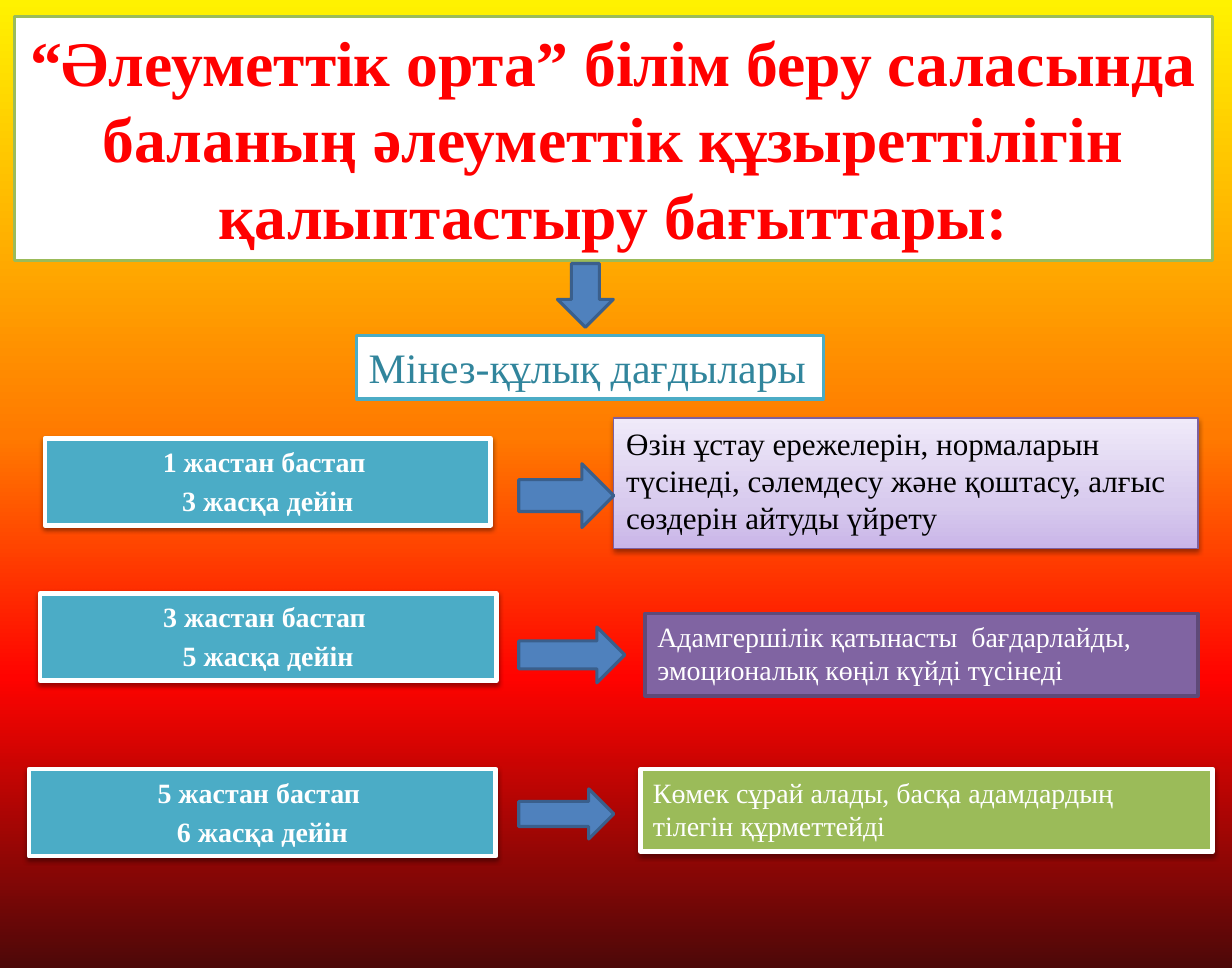
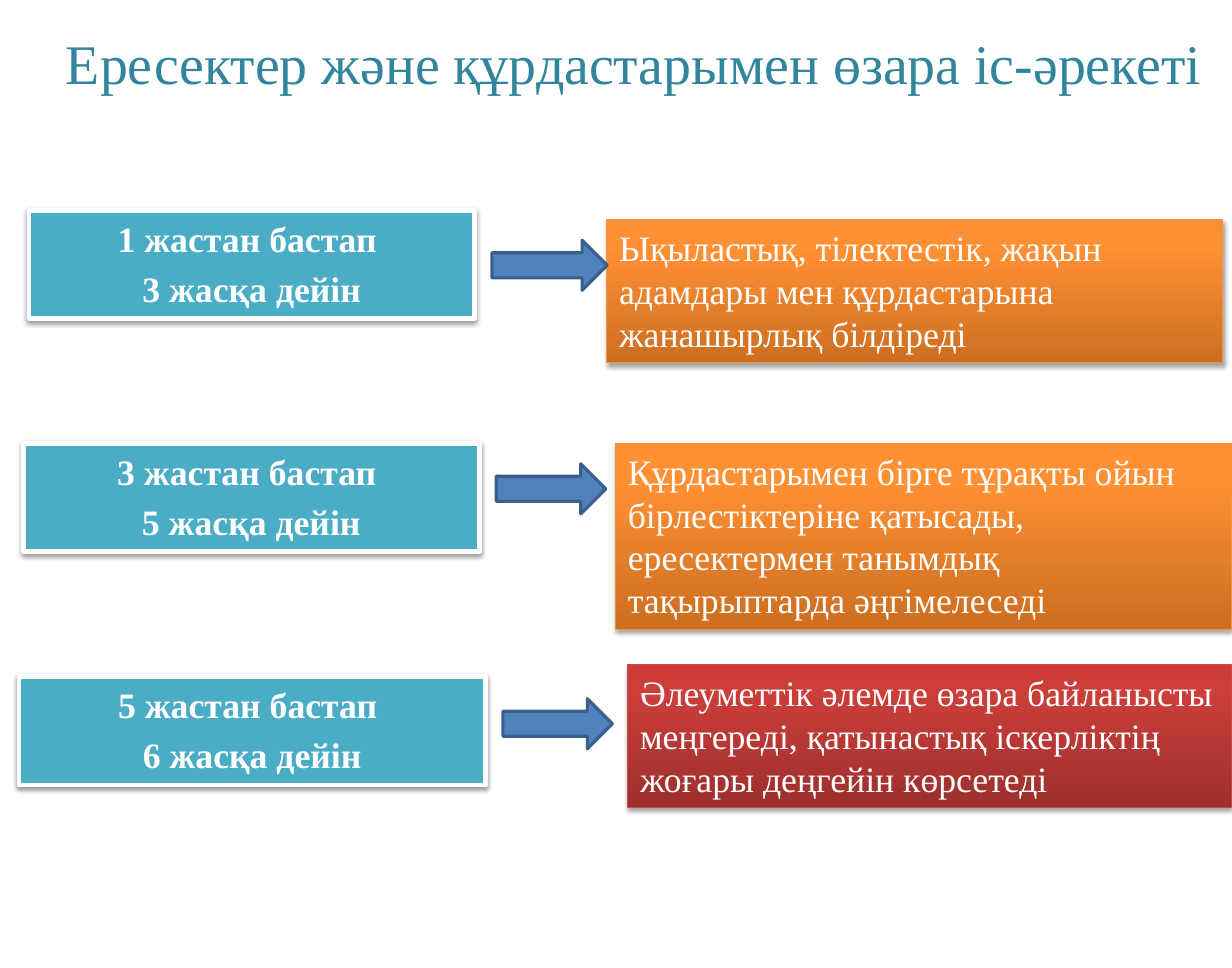
from typing import NamedTuple, Optional, Union

from lxml.etree import SubElement
from pptx import Presentation
from pptx.dml.color import RGBColor
from pptx.enum.shapes import MSO_SHAPE
from pptx.enum.text import MSO_ANCHOR, MSO_AUTO_SIZE, PP_ALIGN
from pptx.oxml.ns import qn
from pptx.util import Cm, Pt

# Shared style
FONT = "Times New Roman"
WHITE = RGBColor(0xFF, 0xFF, 0xFF)
BLACK = RGBColor(0x00, 0x00, 0x00)
RED = RGBColor(0xFF, 0x00, 0x00)
TEAL = RGBColor(0x4B, 0xAC, 0xC6)
DARK_TEAL = RGBColor(0x31, 0x85, 0x9C)
GREEN = RGBColor(0x9B, 0xBB, 0x59)
BLUE = RGBColor(0x4F, 0x81, 0xBD)
DARK_BLUE = RGBColor(0x3A, 0x5F, 0x8C)
PURPLE = RGBColor(0x80, 0x64, 0xA2)
DARK_PURPLE = RGBColor(0x5F, 0x4A, 0x78)
LILAC_EDGE = RGBColor(0x7D, 0x60, 0xA0)
ORANGE_EDGE = RGBColor(0xF6, 0x92, 0x40)
CRIMSON_EDGE = RGBColor(0xBF, 0x4C, 0x48)


class Gradient(NamedTuple):
    stops: tuple  # (percent, colour) pairs
    angle: int = 270  # clockwise


class Look(NamedTuple):
    fill: Union[RGBColor, Gradient]
    line: RGBColor
    width: float = 2
    shadow: int = 0  # opacity in percent
    drop: float = 1.6


class Box(NamedTuple):
    left: float
    top: float
    width: float
    height: float

    def place(self):
        return [Cm(length) for length in self]


class Note(NamedTuple):
    text: str
    look: Look
    drop: float  # distance below the top of the row
    width: float
    height: float
    size: int
    colour: RGBColor = WHITE


class Stage(NamedTuple):
    row: Box
    arrow: Box  # relative to the row
    note: Note


SUNSET = Gradient(((0, RGBColor(0xFF, 0xF2, 0x00)), (45, RGBColor(0xFF, 0x7A, 0x00)),
                   (70, RGBColor(0xFF, 0x03, 0x00)), (100, RGBColor(0x4D, 0x08, 0x08))), 90)
LILAC_FADE = Gradient(((0, RGBColor(0xC9, 0xB5, 0xE8)), (35, RGBColor(0xD8, 0xCB, 0xEE)),
                       (100, RGBColor(0xF0, 0xEA, 0xF9))))
ORANGE_FADE = Gradient(((0, RGBColor(0xCC, 0x6E, 0x20)), (80, RGBColor(0xFF, 0x90, 0x34)),
                        (100, RGBColor(0xFF, 0x91, 0x36))))
CRIMSON_FADE = Gradient(((0, RGBColor(0x9C, 0x2F, 0x2D)), (80, RGBColor(0xCB, 0x3E, 0x3A)),
                         (100, RGBColor(0xCE, 0x3B, 0x37))))

TITLE_LOOK = Look(WHITE, GREEN)
SUBTITLE_LOOK = Look(WHITE, TEAL)
ARROW_LOOK = Look(BLUE, DARK_BLUE)
AGE_LOOK = Look(TEAL, WHITE, 3, 38)
LILAC_LOOK = Look(LILAC_FADE, LILAC_EDGE, 0.75, 38)
PURPLE_LOOK = Look(PURPLE, DARK_PURPLE)
GREEN_LOOK = Look(GREEN, WHITE, 3, 38)
ORANGE_LOOK = Look(ORANGE_FADE, ORANGE_EDGE, 0.75, 35, 1.8)
CRIMSON_LOOK = Look(CRIMSON_FADE, CRIMSON_EDGE, 0.75, 35, 1.8)

# Age groups, with the width of each label
AGES = ((1, 3, 10.13), (3, 5, 10.37), (5, 6, 10.61))

BEHAVIOUR_STAGES = (
    Stage(Box(1.02, 9.96, 26.21, 1.98), Box(10.77, 0.58, 2.16, 1.45),
          Note("Өзін ұстау ережелерін, нормаларын түсінеді, сәлемдесу және қоштасу, "
               "алғыс сөздерін айтуды үйрету", LILAC_LOOK, -0.46, 13.28, 2.97, 20, BLACK)),
    Stage(Box(0.91, 13.49, 26.32, 1.98), Box(10.88, 0.76, 2.41, 1.27),
          Note("Адамгершілік қатынасты  бағдарлайды, эмоционалық көңіл күйді түсінеді",
               PURPLE_LOOK, 0.45, 12.57, 1.88, 18)),
    Stage(Box(0.66, 17.48, 26.9, 1.98), Box(11.13, 0.45, 2.16, 1.14),
          Note("Көмек сұрай алады, басқа адамдардың тілегін құрметтейді",
               GREEN_LOOK, 0, 13, 1.88, 18)),
)
INTERACTION_STAGES = (
    Stage(Box(0.66, 4.78, 27.13, 2.46), Box(10.52, 0.68, 2.62, 1.14),
          Note("Ықыластық, тілектестік, жақын адамдары мен құрдастарына жанашырлық білдіреді",
               ORANGE_LOOK, 0.22, 14, 3.25, 23)),
    Stage(Box(0.53, 10.08, 27.46, 2.46), Box(10.75, 0.46, 2.49, 1.14),
          Note("Құрдастарымен бірге тұрақты ойын бірлестіктеріне қатысады, "
               "ересектермен танымдық тақырыптарда әңгімелеседі",
               ORANGE_LOOK, 0, 14, 4.22, 23)),
    Stage(Box(0.43, 15.38, 27.56, 2.46), Box(11, 0.5, 2.49, 1.14),
          Note("Әлеуметтік әлемде өзара байланысты меңгереді, қатынастық іскерліктің "
               "жоғары деңгейін көрсетеді", CRIMSON_LOOK, -0.27, 13.72, 3.25, 23)),
)


def paint_gradient(fill, element, gradient):
    fill.gradient()
    fill.gradient_angle = 360 - gradient.angle
    stop_list = next(element.iter(qn("a:gsLst")))
    for stop in list(stop_list):
        stop_list.remove(stop)
    for percent, colour in gradient.stops:
        stop = SubElement(stop_list, qn("a:gs"), pos=str(percent * 1000))
        SubElement(stop, qn("a:srgbClr"), val=str(colour))


def add_shadow(shape, opacity, drop):
    effects = next(shape.element.iter(qn("a:effectLst")))
    shadow = SubElement(effects, qn("a:outerShdw"), blurRad=str(Pt(3.1)), dist=str(Pt(drop)),
                        dir="5400000", rotWithShape="0")
    colour = SubElement(shadow, qn("a:srgbClr"), val=str(BLACK))
    SubElement(colour, qn("a:alpha"), val=str(opacity * 1000))


def add_figure(page, kind, box, look):
    shape = page.shapes.add_shape(kind, *box.place())
    shape.shadow.inherit = False
    if isinstance(look.fill, Gradient):
        paint_gradient(shape.fill, shape.element, look.fill)
    else:
        shape.fill.solid()
        shape.fill.fore_color.rgb = look.fill
    shape.line.color.rgb = look.line
    shape.line.width = Pt(look.width)
    if look.shadow:
        add_shadow(shape, look.shadow, look.drop)
    return shape


def write_text(shape, text, size, colour, bold=False, align=PP_ALIGN.LEFT, wrap=True, gap=0.2):
    frame = shape.text_frame
    frame.text = text
    frame.word_wrap = wrap
    frame.auto_size = MSO_AUTO_SIZE.SHAPE_TO_FIT_TEXT
    frame.vertical_anchor = MSO_ANCHOR.TOP
    frame.margin_left = frame.margin_right = Cm(0.28)
    frame.margin_top = frame.margin_bottom = Cm(0.14)
    for para in frame.paragraphs:
        para.alignment = align
        para.space_before = Pt(round(size * gap, 1))
        for span in para.runs:
            span.font.name = FONT
            span.font.size = Pt(size)
            span.font.bold = bold
            span.font.color.rgb = colour


def add_stage_row(page, stage, ages, label_size):
    row, arrow, note = stage
    first, last, label_width = ages

    # Age label at the left
    label = add_figure(page, MSO_SHAPE.RECTANGLE, row._replace(width=label_width), AGE_LOOK)
    write_text(label, f"{first} жастан бастап \n{last} жасқа дейін", label_size, WHITE,
               bold=True, align=PP_ALIGN.CENTER)

    # Note at the right edge
    note_box = Box(row.left + row.width - note.width, row.top + note.drop,
                   note.width, note.height)
    panel = add_figure(page, MSO_SHAPE.RECTANGLE, note_box, note.look)
    write_text(panel, note.text, note.size, note.colour)

    # Arrow between them
    arrow_box = arrow._replace(left=row.left + arrow.left, top=row.top + arrow.top)
    add_figure(page, MSO_SHAPE.RIGHT_ARROW, arrow_box, ARROW_LOOK)


def add_page(deck, stages, label_size, background: Optional[Gradient] = None):
    page = deck.slides.add_slide(deck.slide_layouts[6])
    if background:
        paint_gradient(page.background.fill, page.element, background)
    for stage, ages in zip(stages, AGES):
        add_stage_row(page, stage, ages, label_size)
    return page


def add_behaviour_header(page, box):
    # Framed title
    title = add_figure(page, MSO_SHAPE.RECTANGLE, box._replace(height=5.54), TITLE_LOOK)
    write_text(title, "“Әлеуметтік орта” білім беру саласында баланың әлеуметтік "
               "құзыреттілігін қалыптастыру бағыттары:", 41, RED, bold=True,
               align=PP_ALIGN.CENTER, gap=0)

    # Arrow down to the subtitle
    add_figure(page, MSO_SHAPE.DOWN_ARROW,
               Box(box.left + 12.34, box.top + 5.61, 1.27, 1.45), ARROW_LOOK)
    subtitle = add_figure(page, MSO_SHAPE.RECTANGLE,
                          Box(box.left + 7.77, box.top + 7.24, 10.62, 1.45), SUBTITLE_LOOK)
    write_text(subtitle, "Мінез-құлық дағдылары", 27, DARK_TEAL, wrap=False)


def add_interaction_header(page, box):
    heading = page.shapes.add_textbox(*box.place())
    write_text(heading, "Ересектер және құрдастарымен өзара іс-әрекеті", 36, DARK_TEAL,
               wrap=False)


def main():
    deck = Presentation()
    deck.slide_width, deck.slide_height = Cm(28), Cm(22)

    behaviour = add_page(deck, BEHAVIOUR_STAGES, 18, SUNSET)
    add_behaviour_header(behaviour, Box(0.33, 0.38, 27.23, 8.69))

    interaction = add_page(deck, INTERACTION_STAGES, 23)
    add_interaction_header(interaction, Box(1.22, 0.51, 26.67, 1.83))

    deck.save("out.pptx")


if __name__ == "__main__":
    main()
